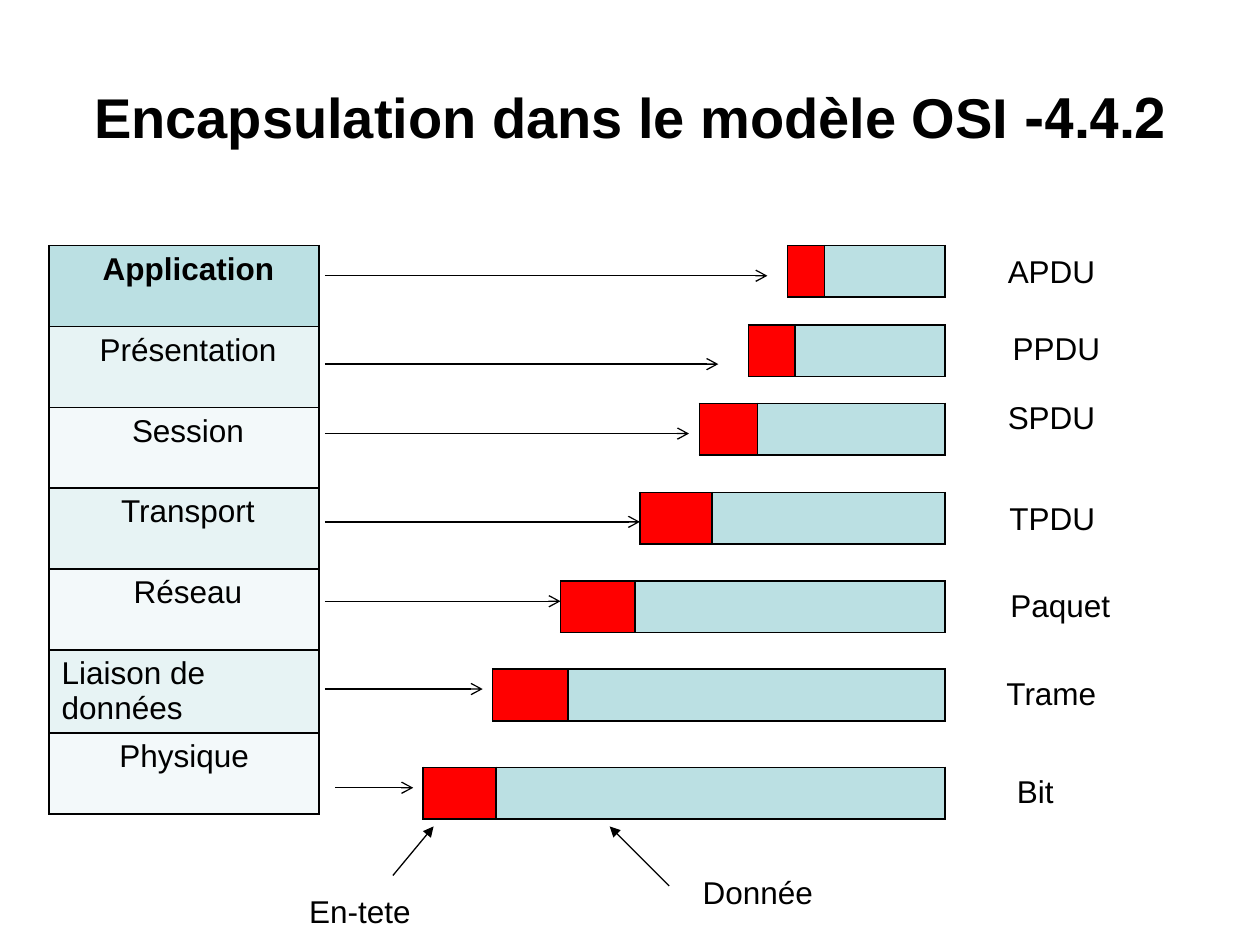
from dataclasses import dataclass

from lxml.etree import SubElement
from pptx import Presentation
from pptx.dml.color import RGBColor
from pptx.enum.shapes import MSO_CONNECTOR
from pptx.enum.text import MSO_ANCHOR, MSO_AUTO_SIZE, PP_ALIGN
from pptx.oxml.ns import qn
from pptx.util import Cm, Pt

COLOURS = {
    "black": "000000",
    "header": "FF0000",
    "data": "BBE0E3",
    "odd": "E7F3F4",
    "even": "F3F9FA",
}
FONT = "Arial"
BAR_RIGHT = 19.05
BAR_HEIGHT = 1.04
LAYER_LEFT, LAYER_TOP, LAYER_WIDTH, LAYER_HEIGHT = 0.99, 4.95, 5.44, 1.63
TEXT_HEIGHT = 1.02


@dataclass
class Label:
    text: str
    left: float
    top: float
    width: float
    right_to_left: bool = True
    wrap: bool = False


@dataclass
class Arrow:
    start_x: float
    start_y: float
    end_x: float
    end_y: float
    end_tag: str = "tailEnd"
    kind: str = "arrow"


@dataclass
class Layer:
    name: str
    bar_left: float
    bar_top: float
    header_width: float
    arrow_y: float
    arrow_end: float
    unit: Label
    arrow_start: float = 6.55


LAYERS = [
    Layer("Application ", 15.88, 4.95, 0.74, 5.56, 15.47, Label("APDU", 20.04, 4.95, 2.29)),
    Layer("Présentation ", 15.09, 6.55, 0.94, 7.34, 14.48, Label("PPDU", 20.14, 6.5, 2.29)),
    Layer("Session ", 14.1, 8.13, 1.17, 8.74, 13.89, Label("SPDU", 20.04, 7.9, 2.29)),
    Layer("Transport ", 12.9, 9.93, 1.45, 10.52, 12.9, Label("TPDU", 20.07, 9.93, 2.26)),
    Layer("Réseau ", 11.3, 11.71, 1.5, 12.12, 11.3, Label("Paquet ", 19.91, 11.68, 2.72)),
    Layer("Liaison de données", 9.93, 13.49, 1.52, 13.89, 9.73,
          Label("Trame", 20.04, 13.46, 2.51, right_to_left=False)),
    Layer("Physique", 8.53, 15.47, 1.47, 15.88, 8.33, Label("Bit ", 20.04, 15.44, 1.45), 6.76),
]
CAPTIONS = [
    Label("En-tete ", 4.95, 17.86, 3.58, wrap=True),
    Label("Donnée ", 13.69, 17.48, 2.95),
]
POINTERS = [
    Arrow(8.74, 16.66, 7.92, 17.65, "headEnd", "triangle"),
    Arrow(12.29, 16.66, 13.49, 17.86, "headEnd", "triangle"),
]


def colour(name: str) -> RGBColor:
    return RGBColor.from_string(COLOURS[name])


def write(text_frame, text: str, alignment, right_to_left=True, size=18, bold=False) -> None:
    text_frame.text = text
    paragraph = text_frame.paragraphs[0]
    paragraph.alignment = alignment
    if right_to_left:
        paragraph._p.get_or_add_pPr().set("rtl", "1")
    font = paragraph.runs[0].font
    font.name = FONT
    font.size = Pt(size)
    font.bold = bold
    font.color.rgb = colour("black")


def style_cell(cell, fill: str) -> None:
    properties = cell._tc.get_or_add_tcPr()
    for side in ("lnL", "lnR", "lnT", "lnB"):
        border = SubElement(properties, qn(f"a:{side}"), w=str(Pt(1)))
        solid = SubElement(border, qn("a:solidFill"))
        SubElement(solid, qn("a:srgbClr"), val=COLOURS["black"])
    cell.fill.solid()
    cell.fill.fore_color.rgb = colour(fill)


def add_grid(slide, left: float, top: float, widths: list[float], heights: list[float]):
    table = slide.shapes.add_table(
        len(heights), len(widths), Cm(left), Cm(top), Cm(sum(widths)), Cm(sum(heights))
    ).table
    table.first_row = False
    table.horz_banding = False
    for column, width in zip(table.columns, widths):
        column.width = Cm(width)
    for row, height in zip(table.rows, heights):
        row.height = Cm(height)
    return table


def add_layer_table(slide) -> None:
    table = add_grid(slide, LAYER_LEFT, LAYER_TOP, [LAYER_WIDTH], [LAYER_HEIGHT] * len(LAYERS))
    for index, layer in enumerate(LAYERS):
        cell = table.cell(index, 0)
        first = index == 0
        style_cell(cell, "data" if first else "odd" if index % 2 else "even")
        centred = layer.name != "Liaison de données"
        alignment = PP_ALIGN.CENTER if centred else PP_ALIGN.LEFT
        write(cell.text_frame, layer.name, alignment, right_to_left=centred, bold=first)


def add_bar(slide, layer: Layer) -> None:
    data_width = BAR_RIGHT - layer.bar_left - layer.header_width
    table = add_grid(
        slide, layer.bar_left, layer.bar_top, [layer.header_width, data_width], [BAR_HEIGHT]
    )
    for column, fill in enumerate(("header", "data")):
        style_cell(table.cell(0, column), fill)


def add_label(slide, label: Label) -> None:
    shape = slide.shapes.add_textbox(
        Cm(label.left), Cm(label.top), Cm(label.width), Cm(TEXT_HEIGHT)
    )
    shape.text_frame.word_wrap = label.wrap
    shape.text_frame.auto_size = MSO_AUTO_SIZE.SHAPE_TO_FIT_TEXT
    alignment = PP_ALIGN.RIGHT if label.right_to_left else PP_ALIGN.LEFT
    write(shape.text_frame, label.text, alignment, label.right_to_left)


def add_arrow(slide, arrow: Arrow) -> None:
    connector = slide.shapes.add_connector(
        MSO_CONNECTOR.STRAIGHT,
        Cm(arrow.start_x), Cm(arrow.start_y), Cm(arrow.end_x), Cm(arrow.end_y),
    )
    connector.line.color.rgb = colour("black")
    connector.line.width = Pt(0.75)
    SubElement(connector.line._get_or_add_ln(), qn(f"a:{arrow.end_tag}"), type=arrow.kind)
    SubElement(connector._element.spPr, qn("a:effectLst"))


def main() -> None:
    presentation = Presentation()
    presentation.slide_width, presentation.slide_height = Cm(25.4), Cm(19.05)
    slide = presentation.slides.add_slide(presentation.slide_layouts[5])

    title = slide.shapes.title
    title.left, title.top, title.width, title.height = Cm(1.27), Cm(0.76), Cm(22.86), Cm(3.18)
    title.text_frame.vertical_anchor = MSO_ANCHOR.MIDDLE
    write(title.text_frame, "4.4.2- Encapsulation dans le modèle OSI",
          PP_ALIGN.CENTER, size=32, bold=True)

    add_layer_table(slide)
    for layer in LAYERS:
        add_bar(slide, layer)
    for label in [layer.unit for layer in LAYERS] + CAPTIONS:
        add_label(slide, label)
    layer_arrows = [
        Arrow(layer.arrow_start, layer.arrow_y, layer.arrow_end, layer.arrow_y)
        for layer in LAYERS
    ]
    for arrow in POINTERS + layer_arrows:
        add_arrow(slide, arrow)

    presentation.save("out.pptx")


if __name__ == "__main__":
    main()
